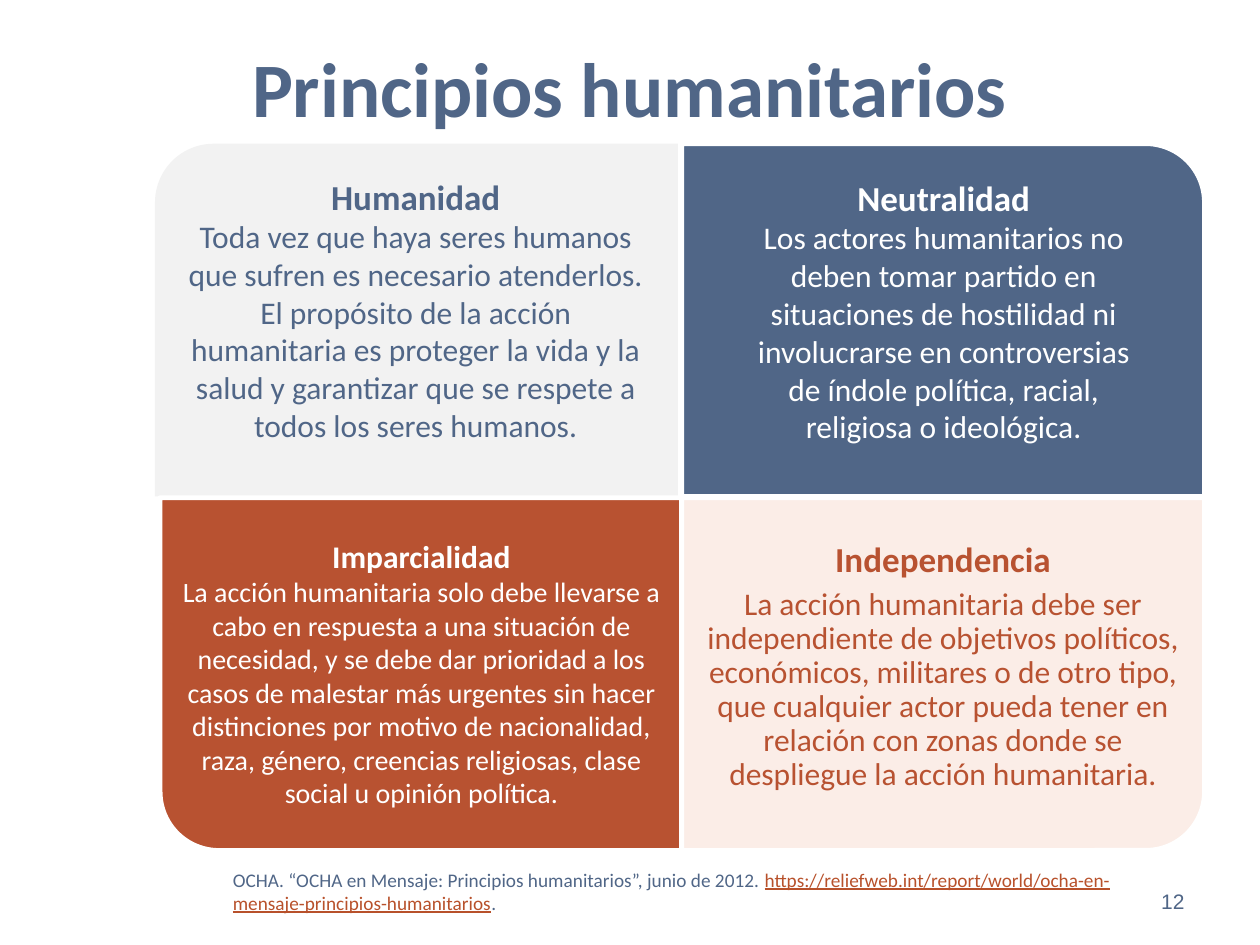
from pptx import Presentation
from pptx.dml.color import RGBColor
from pptx.enum.shapes import MSO_SHAPE
from pptx.enum.text import MSO_ANCHOR, PP_ALIGN
from pptx.util import Inches, Pt

ROUND_ONE = MSO_SHAPE.ROUND_1_RECTANGLE
TOP, MIDDLE = MSO_ANCHOR.TOP, MSO_ANCHOR.MIDDLE
LEFT, CENTER, RIGHT = PP_ALIGN.LEFT, PP_ALIGN.CENTER, PP_ALIGN.RIGHT

BLUE, RUST, LINK = "506687", "B85231", "B8512B"
GREY, PEACH, WHITE = "F2F2F2", "FBEDE7", "FFFFFF"
PANEL_W, PANEL_H = 4.15, 2.8


def rgb(value):
    return RGBColor.from_string(value)


class PrinciplesSlide:
    def __init__(self, prs):
        self.font = "Calibri"
        self.slide = prs.slides.add_slide(prs.slide_layouts[5])

    def style(self, font, size, color, bold=False, name=None):
        font.name = name or self.font
        font.size = Pt(size)
        font.bold = bold
        font.color.rgb = rgb(color)

    def title(self, text):
        heading = self.slide.shapes.title
        heading.left, heading.top = Inches(0.5), Inches(0.06)
        heading.width, heading.height = Inches(9), Inches(1.25)
        frame = heading.text_frame
        frame.text = text
        frame.vertical_anchor = MIDDLE
        frame.paragraphs[0].alignment = CENTER
        self.style(frame.paragraphs[0].runs[0].font, 44, BLUE, bold=True)

    def panel(self, left, top, rotation, fill, outlined=True):
        """Add a quadrant whose rounded corner is turned to the outside."""
        sideways = rotation % 180 == 90
        width, height = (PANEL_H, PANEL_W) if sideways else (PANEL_W, PANEL_H)
        shape = self.slide.shapes.add_shape(
            ROUND_ONE,
            Inches(left + (PANEL_W - width) / 2),
            Inches(top + (PANEL_H - height) / 2),
            Inches(width), Inches(height))
        shape.rotation = rotation
        shape.shadow.inherit = False
        shape.fill.solid()
        shape.fill.fore_color.rgb = rgb(fill)
        if outlined:
            shape.line.color.rgb = rgb(WHITE)
            shape.line.width = Pt(2.75)
        else:
            shape.line.fill.background()

    def text_frame(self, left, top, width, height, anchor=TOP, inset=None):
        box = self.slide.shapes.add_textbox(
            Inches(left), Inches(top), Inches(width), Inches(height))
        frame = box.text_frame
        frame.word_wrap = True
        frame.vertical_anchor = anchor
        if inset is not None:
            frame.margin_left = frame.margin_right = Inches(inset)
            frame.margin_top = frame.margin_bottom = Inches(inset)
        return frame

    def principle(self, place, name, meaning, sizes, color, spacing=1.0, gap=0):
        frame = self.text_frame(*place, inset=0.11)
        frame.text = f"{name}\n{meaning}"
        for paragraph, size in zip(frame.paragraphs, sizes):
            paragraph.alignment = CENTER
            paragraph.line_spacing = spacing
            is_name = paragraph.text == name
            if not is_name:
                paragraph.space_before = Pt(gap)
            self.style(paragraph.runs[0].font, size, color, bold=is_name)

    def source(self, parts):
        paragraph = self.text_frame(1.75, 6.84, 7.4, 0.47).paragraphs[0]
        paragraph.alignment = LEFT
        for text, color, underlined in parts:
            run = paragraph.add_run()
            run.text = text
            self.style(run.font, 11, color)
            run.font.underline = underlined

    def page_number(self, number):
        frame = self.text_frame(7.17, 6.95, 2.33, 0.4, anchor=MIDDLE)
        frame.text = number
        frame.paragraphs[0].alignment = RIGHT
        self.style(frame.paragraphs[0].runs[0].font, 12, BLUE, name="Arial")


def main():
    prs = Presentation()
    prs.slide_width, prs.slide_height = Inches(10), Inches(7.5)
    page = PrinciplesSlide(prs)
    page.title("Principios humanitarios")

    page.panel(1.23, 1.14, 270, GREY, outlined=False)
    page.panel(5.41, 1.14, 0, BLUE)
    page.panel(1.27, 3.95, 180, RUST)
    page.panel(5.41, 3.95, 90, PEACH)

    page.principle(
        (1.33, 1.28, 3.94, 2.4), "Humanidad",
        "Toda vez que haya seres humanos que sufren es necesario atenderlos. "
        "El propósito de la acción humanitaria es proteger la vida y la salud "
        "y garantizar que se respete a todos los seres humanos.",
        (20, 18), BLUE)
    page.principle(
        (5.83, 1.29, 3.32, 2.4), "Neutralidad",
        "Los actores humanitarios no deben tomar partido en situaciones de "
        "hostilidad ni involucrarse en controversias de índole política, "
        "racial, religiosa o ideológica.",
        (20, 18), WHITE)
    page.principle(
        (1.27, 4.15, 4.15, 2.47), "Imparcialidad",
        "La acción humanitaria solo debe llevarse a cabo en respuesta a una "
        "situación de necesidad, y se debe dar prioridad a los casos de "
        "malestar más urgentes sin hacer distinciones por motivo de "
        "nacionalidad, raza, género, creencias religiosas, clase social u "
        "opinión política.",
        (18, 16), WHITE)
    page.principle(
        (5.41, 4.19, 4.15, 2.3), "Independencia",
        "La acción humanitaria debe ser independiente de objetivos políticos, "
        "económicos, militares o de otro tipo, que cualquier actor pueda tener "
        "en relación con zonas donde se despliegue la acción humanitaria.",
        (20, 18), RUST, spacing=0.9, gap=5)

    page.source([
        ("OCHA. “OCHA en Mensaje: Principios humanitarios”, junio de 2012. ",
         BLUE, False),
        ("https://reliefweb.int/report/world/"
         "ocha-en-mensaje-principios-humanitarios", LINK, True),
        (".", BLUE, False),
    ])
    page.page_number("12")
    prs.save("out.pptx")


if __name__ == "__main__":
    main()
